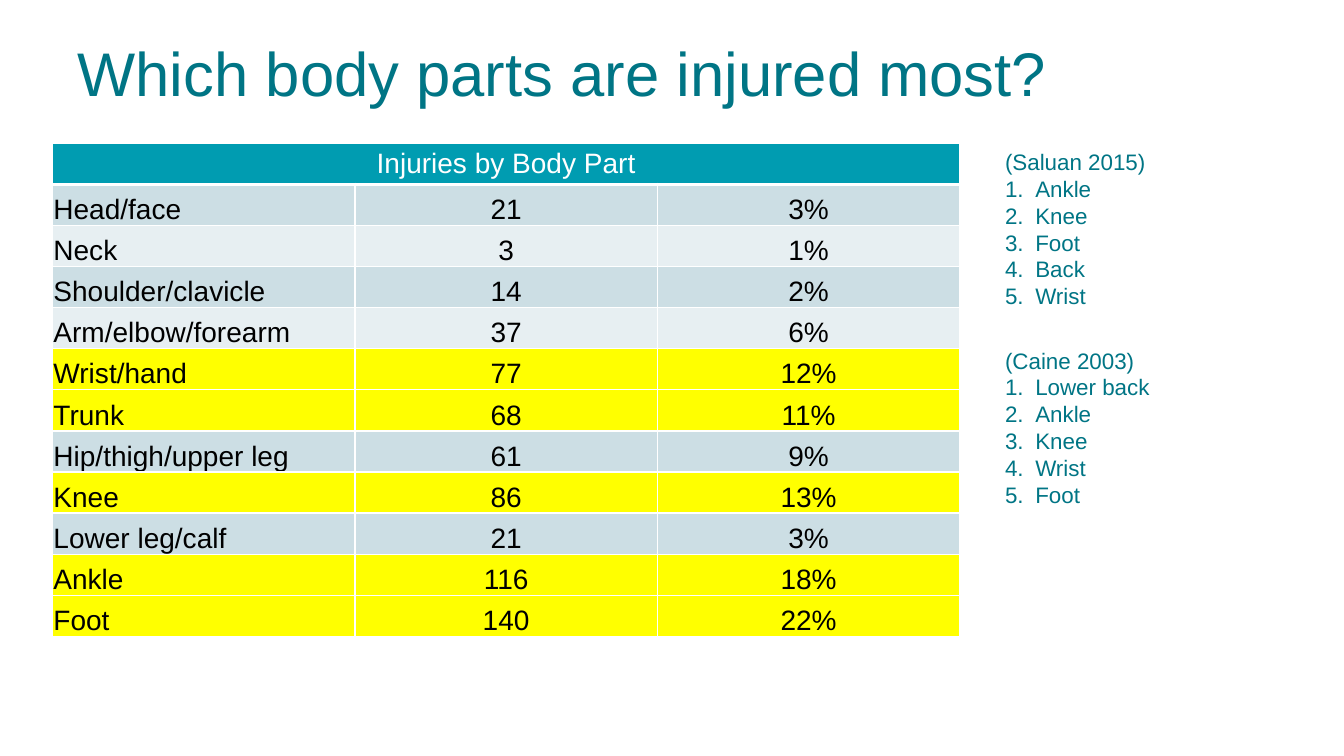
from lxml.etree import SubElement
from pptx import Presentation
from pptx.dml.color import RGBColor
from pptx.enum.text import MSO_ANCHOR, MSO_AUTO_SIZE, PP_ALIGN
from pptx.oxml.ns import qn
from pptx.util import Inches, Pt

FONT = "Arial"
TEAL = RGBColor(0x00, 0x75, 0x85)
HEADER_TEAL = RGBColor(0x00, 0x9C, 0xB1)
BAND_DARK = RGBColor(0xCC, 0xDE, 0xE4)
BAND_LIGHT = RGBColor(0xE7, 0xEF, 0xF2)
HIGHLIGHT = RGBColor(0xFF, 0xFF, 0x00)
WHITE = RGBColor(0xFF, 0xFF, 0xFF)
BLACK = RGBColor(0x00, 0x00, 0x00)

HIGHLIGHT_FROM = 10  # percent of all injuries
INJURIES = [
    ("Head/face", 21, 3),
    ("Neck", 3, 1),
    ("Shoulder/clavicle", 14, 2),
    ("Arm/elbow/forearm", 37, 6),
    ("Wrist/hand", 77, 12),
    ("Trunk", 68, 11),
    ("Hip/thigh/upper leg", 61, 9),
    ("Knee", 86, 13),
    ("Lower leg/calf", 21, 3),
    ("Ankle", 116, 18),
    ("Foot", 140, 22),
]
RANKINGS = [
    (1.42, "(Saluan 2015)", ["Ankle", "Knee", "Foot", "Back", "Wrist"]),
    (3.39, "(Caine 2003)", ["Lower back", "Ankle", "Knee", "Wrist", "Foot"]),
]


def add_span(para, text, size, color, align=PP_ALIGN.LEFT):
    para.alignment = align
    span = para.add_run()
    span.text = text
    span.font.name = FONT
    span.font.size = Pt(size)
    span.font.color.rgb = color


def set_title(page, text):
    title = page.shapes.title
    title.left, title.top = Inches(0.67), Inches(0.3)
    title.width, title.height = Inches(12), Inches(1.25)
    title.text_frame.vertical_anchor = MSO_ANCHOR.TOP
    add_span(title.text_frame.paragraphs[0], text, 44, TEAL)


def set_borders(cell, bottom=1):
    """Draw white cell borders, 1 pt wide except the bottom one."""
    cell_props = cell._tc.get_or_add_tcPr()
    for side, width in (("L", 1), ("R", 1), ("T", 1), ("B", bottom)):
        line = SubElement(cell_props, qn(f"a:ln{side}"), w=str(Pt(width)))
        fill = SubElement(line, qn("a:solidFill"))
        SubElement(fill, qn("a:srgbClr"), val=str(WHITE))


def paint_cell(cell, color, bottom=1):
    set_borders(cell, bottom)
    cell.fill.solid()
    cell.fill.fore_color.rgb = color


def row_color(number, share):
    if share > HIGHLIGHT_FROM:
        return HIGHLIGHT
    return BAND_DARK if number % 2 else BAND_LIGHT


def add_injury_table(page):
    row_count = len(INJURIES) + 1
    table = page.shapes.add_table(row_count, 3, Inches(0.52), Inches(1.42),
                                  Inches(9), Inches(4.89)).table

    for cell in table.rows[0].cells:
        paint_cell(cell, HEADER_TEAL, bottom=3)
    header = table.cell(0, 0)
    header.merge(table.cell(0, 2))
    add_span(header.text_frame.paragraphs[0], "Injuries by Body Part", 20,
             WHITE, PP_ALIGN.CENTER)

    for number, (part, count, share) in enumerate(INJURIES, 1):
        for column, text in enumerate((part, str(count), f"{share}%")):
            cell = table.cell(number, column)
            paint_cell(cell, row_color(number, share))
            cell.margin_left = cell.margin_right = cell.margin_top = Inches(0.01)
            cell.margin_bottom = 0
            cell.vertical_anchor = MSO_ANCHOR.BOTTOM
            align = PP_ALIGN.CENTER if column else PP_ALIGN.LEFT
            add_span(cell.text_frame.paragraphs[0], text, 20, BLACK, align)


def number_paragraph(para):
    indent = Inches(0.3)
    props = para._p.get_or_add_pPr()
    props.set("marL", str(indent))
    props.set("indent", str(-indent))
    SubElement(props, qn("a:buFont"), typeface=FONT)
    SubElement(props, qn("a:buAutoNum"), type="arabicPeriod")


def add_ranking(page, top, study, parts):
    box = page.shapes.add_textbox(Inches(9.87), Inches(top), Inches(2.94), Inches(1.72))
    frame = box.text_frame
    frame.word_wrap = True
    frame.auto_size = MSO_AUTO_SIZE.SHAPE_TO_FIT_TEXT
    add_span(frame.paragraphs[0], study, 16, TEAL)
    for part in parts:
        para = frame.add_paragraph()
        number_paragraph(para)
        add_span(para, part, 16, TEAL)


def main():
    deck = Presentation()
    deck.slide_width, deck.slide_height = Inches(13.33), Inches(7.5)
    page = deck.slides.add_slide(deck.slide_layouts[5])
    set_title(page, "Which body parts are injured most?")
    add_injury_table(page)
    for top, study, parts in RANKINGS:
        add_ranking(page, top, study, parts)
    deck.save("out.pptx")


if __name__ == "__main__":
    main()
